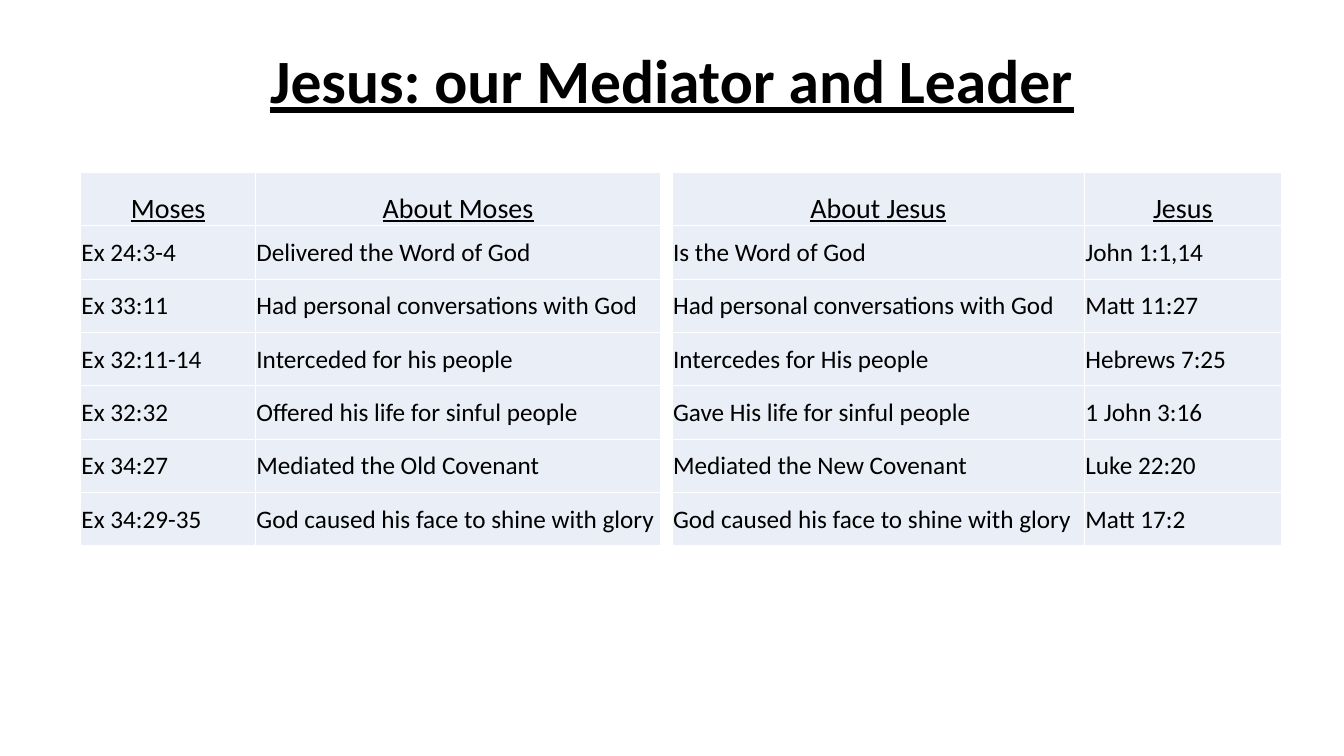
from lxml.etree import SubElement
from pptx import Presentation
from pptx.dml.color import RGBColor
from pptx.enum.text import MSO_ANCHOR, PP_ALIGN
from pptx.oxml.ns import qn
from pptx.util import Pt

BLACK = RGBColor(0x00, 0x00, 0x00)
WHITE = RGBColor(0xFF, 0xFF, 0xFF)
PALE_BLUE = RGBColor(0xEA, 0xEF, 0xF7)
FONT = "Calibri"
TABLE_TOP = 123.2
ROW_HEIGHT = 38.1

MOSES = [
    ("Moses", "About Moses"),
    ("Ex 24:3-4", "Delivered the Word of God"),
    ("Ex 33:11", "Had personal conversations with God"),
    ("Ex 32:11-14", "Interceded for his people"),
    ("Ex 32:32", "Offered his life for sinful people"),
    ("Ex 34:27", "Mediated the Old Covenant"),
    ("Ex 34:29-35", "God caused his face to shine with glory"),
]
JESUS = [
    ("About Jesus", "Jesus"),
    ("Is the Word of God", "John 1:1,14"),
    ("Had personal conversations with God", "Matt 11:27"),
    ("Intercedes for His people", "Hebrews 7:25"),
    ("Gave His life for sinful people", "1 John 3:16"),
    ("Mediated the New Covenant", "Luke 22:20"),
    ("God caused his face to shine with glory", "Matt 17:2"),
]


def write(tf, text, size=18, bold=False, underline=False, align=PP_ALIGN.LEFT,
          spacing=1.0):
    p = tf.paragraphs[0]
    p.alignment = align
    p.line_spacing = spacing
    r = p.add_run()
    r.text = text
    r.font.name = FONT
    r.font.size = Pt(size)
    r.font.bold = bold
    r.font.underline = underline
    r.font.color.rgb = BLACK


def add_title(s, text):
    title = s.shapes.title
    title.left, title.top = Pt(66), Pt(22.5)
    title.width, title.height = Pt(828), Pt(75)
    tf = title.text_frame
    tf.word_wrap = True
    tf.vertical_anchor = MSO_ANCHOR.MIDDLE
    write(tf, text, size=44, bold=True, underline=True,
          align=PP_ALIGN.CENTER, spacing=0.9)


def set_borders(cell, color, width):
    tc_pr = cell._tc.get_or_add_tcPr()
    for i, side in enumerate(("a:lnL", "a:lnR", "a:lnT", "a:lnB")):
        ln = tc_pr.makeelement(qn(side), {"w": str(Pt(width))})
        fill = SubElement(ln, qn("a:solidFill"))
        SubElement(fill, qn("a:srgbClr"), val=str(color))
        tc_pr.insert(i, ln)


def format_cell(cell, text, is_header):
    cell.margin_left = cell.margin_right = cell.margin_top = Pt(0.6)
    cell.margin_bottom = Pt(0)
    cell.fill.solid()
    cell.fill.fore_color.rgb = PALE_BLUE
    set_borders(cell, WHITE, 1)
    if is_header:
        cell.vertical_anchor = MSO_ANCHOR.BOTTOM
        write(cell.text_frame, text, size=20, underline=True,
              align=PP_ALIGN.CENTER)
    else:
        cell.vertical_anchor = MSO_ANCHOR.MIDDLE
        write(cell.text_frame, text)


def add_verse_table(s, rows, left, widths):
    frame = s.shapes.add_table(len(rows), len(widths), Pt(left), Pt(TABLE_TOP),
                               Pt(sum(widths)), Pt(ROW_HEIGHT * len(rows)))
    table = frame.table
    table.first_row = table.horz_banding = False
    for column, width in zip(table.columns, widths):
        column.width = Pt(width)
    for i, texts in enumerate(rows):
        table.rows[i].height = Pt(ROW_HEIGHT)
        for j, text in enumerate(texts):
            format_cell(table.cell(i, j), text, is_header=i == 0)


def main():
    prs = Presentation()
    prs.slide_width, prs.slide_height = Pt(960), Pt(540)
    s = prs.slides.add_slide(prs.slide_layouts[5])
    add_title(s, "Jesus: our Mediator and Leader")
    add_verse_table(s, JESUS, 480.2, (294.5, 140.4))
    add_verse_table(s, MOSES, 57.6, (125, 289.2))
    prs.save("out.pptx")


if __name__ == "__main__":
    main()
